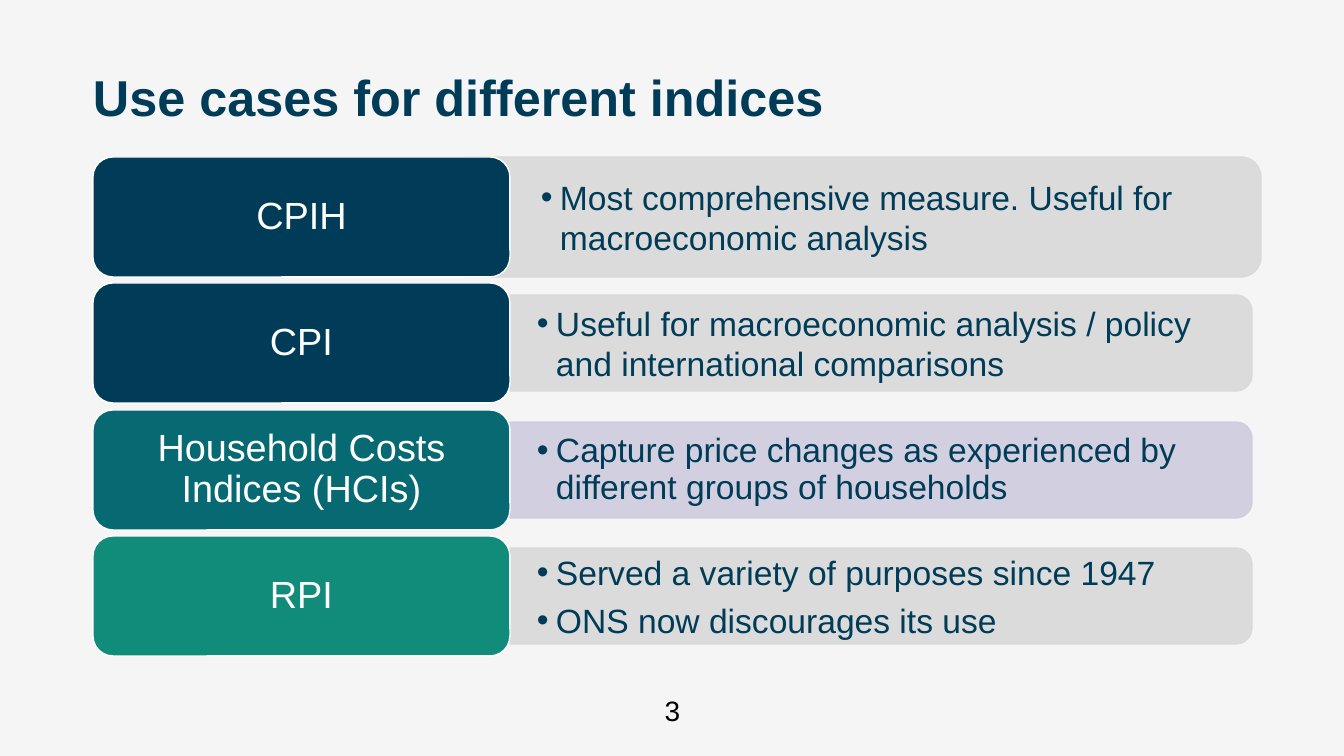
"""Build the slide on use cases for different price indices."""
from math import cos, pi, sin

from lxml import etree
from pptx import Presentation
from pptx import util as u
from pptx.dml.color import RGBColor
from pptx.enum import shapes, text
from pptx.oxml.ns import qn

PX = 914400 / 100.8
PAPER = RGBColor(0xF5, 0xF5, 0xF6)
NAVY = RGBColor(0x00, 0x3C, 0x57)
INK = RGBColor(0x00, 0x3B, 0x57)
TEAL = RGBColor(0x07, 0x6A, 0x73)
GREEN = RGBColor(0x11, 0x8C, 0x7B)
GREY = RGBColor(0xD9, 0xD9, 0xD9)
LILAC = RGBColor(0xCF, 0xCD, 0xDE)
WHITE = RGBColor(0xFF, 0xFF, 0xFF)
BLACK = RGBColor(0x00, 0x00, 0x00)


def px(n):
    return u.Emu(round(n * PX))


def style(para, size, color, align, bold=False):
    para.alignment = align
    font = para.font
    font.name, font.size, font.bold = "Arial", u.Pt(size), bold
    font.color.rgb = color


deck = Presentation()
deck.slide_width, deck.slide_height = px(1344), px(756)
slide = deck.slides.add_slide(deck.slide_layouts[5])
slide.background.fill.solid()
slide.background.fill.fore_color.rgb = PAPER

title = slide.shapes.title
title.left, title.top, title.width, title.height = px(93), px(71), px(1159), px(58)
frame = title.text_frame
frame.text = "Use cases for different indices"
frame.auto_size = text.MSO_AUTO_SIZE.NONE
frame.vertical_anchor = text.MSO_ANCHOR.TOP
frame.margin_left = frame.margin_right = frame.margin_top = frame.margin_bottom = 0
frame.paragraphs[0].line_spacing = 0.95
style(frame.paragraphs[0], 36, NAVY, text.PP_ALIGN.LEFT, True)

number = slide.shapes.add_textbox(px(514), px(689), px(317), px(40))
number.text_frame.word_wrap = True
number.text_frame.text = "3"
style(number.text_frame.paragraphs[0], 20, BLACK, text.PP_ALIGN.CENTER)

# Each row: tile label, tile colour, panel colour, panel left, right, height, indent, line spacing, uses.
rows = [
    ("CPIH", NAVY, GREY, 464, 1261, 120, 69, 1.0,
     ["Most comprehensive measure. Useful for macroeconomic analysis"]),
    ("CPI", NAVY, GREY, 510, 1252, 96, 19, 1.0,
     ["Useful for macroeconomic analysis / policy and international comparisons"]),
    ("Household Costs Indices (HCIs)", TEAL, LILAC, 510, 1252, 96, 19, 0.9,
     ["Capture price changes as experienced by different groups of households"]),
    ("RPI", GREEN, GREY, 510, 1252, 96, 19, 1.0,
     ["Served a variety of purposes since 1947", "ONS now discourages its use"]),
]

for i, (label, shade, tint, left, right, high, indent, space, uses) in enumerate(rows):
    top = 157 + round(126.4 * i)
    head = top + (120 - high) // 2
    foot = head + high
    bend = high / 6
    turns = [pi / 2 * k / 8 for k in range(9)]
    curve = [(right - bend + bend * sin(a), head + bend - bend * cos(a)) for a in turns]
    curve += [(right - bend + bend * cos(a), foot - bend + bend * sin(a)) for a in turns]
    outline = slide.shapes.build_freeform(round(left * PX), round(head * PX))
    outline.add_line_segments([(px(x), px(y)) for x, y in curve + [(left, foot)]])
    panel = outline.convert_to_shape()
    tile = slide.shapes.add_shape(
        shapes.MSO_SHAPE.ROUNDED_RECTANGLE, px(93), px(top), px(417), px(120))

    for shape, fill, line in ((panel, tint, tint), (tile, shade, WHITE)):
        shape.shadow.inherit = False
        shape.fill.solid()
        shape.fill.fore_color.rgb = fill
        shape.line.color.rgb = line
        shape.line.width = u.Pt(1)
        shape.text_frame.word_wrap = True
        shape.text_frame.vertical_anchor = text.MSO_ANCHOR.MIDDLE
    for tone in panel.element.spPr.iter(qn("a:srgbClr")):
        etree.SubElement(tone, qn("a:alpha"), val="90000")

    frame = tile.text_frame
    frame.margin_left = frame.margin_right = px(17)
    frame.margin_top = frame.margin_bottom = px(11)
    frame.text = label
    frame.paragraphs[0].line_spacing = 0.9
    style(frame.paragraphs[0], 27, WHITE, text.PP_ALIGN.CENTER)

    frame = panel.text_frame
    frame.margin_left, frame.margin_right = px(27), px(33)
    frame.margin_top = frame.margin_bottom = px(18)
    frame.text = "\n".join(uses)
    for para in frame.paragraphs:
        para.line_spacing = space
        para.space_after = u.Pt(6 if space == 1 else 0)
        props = para._p.get_or_add_pPr()
        props.set("marL", str(px(indent)))
        props.set("indent", str(-px(19)))
        etree.SubElement(props, qn("a:buFont"), typeface="Arial")
        etree.SubElement(props, qn("a:buChar"), char="•")
        style(para, 24, INK, text.PP_ALIGN.LEFT)

deck.save("out.pptx")
